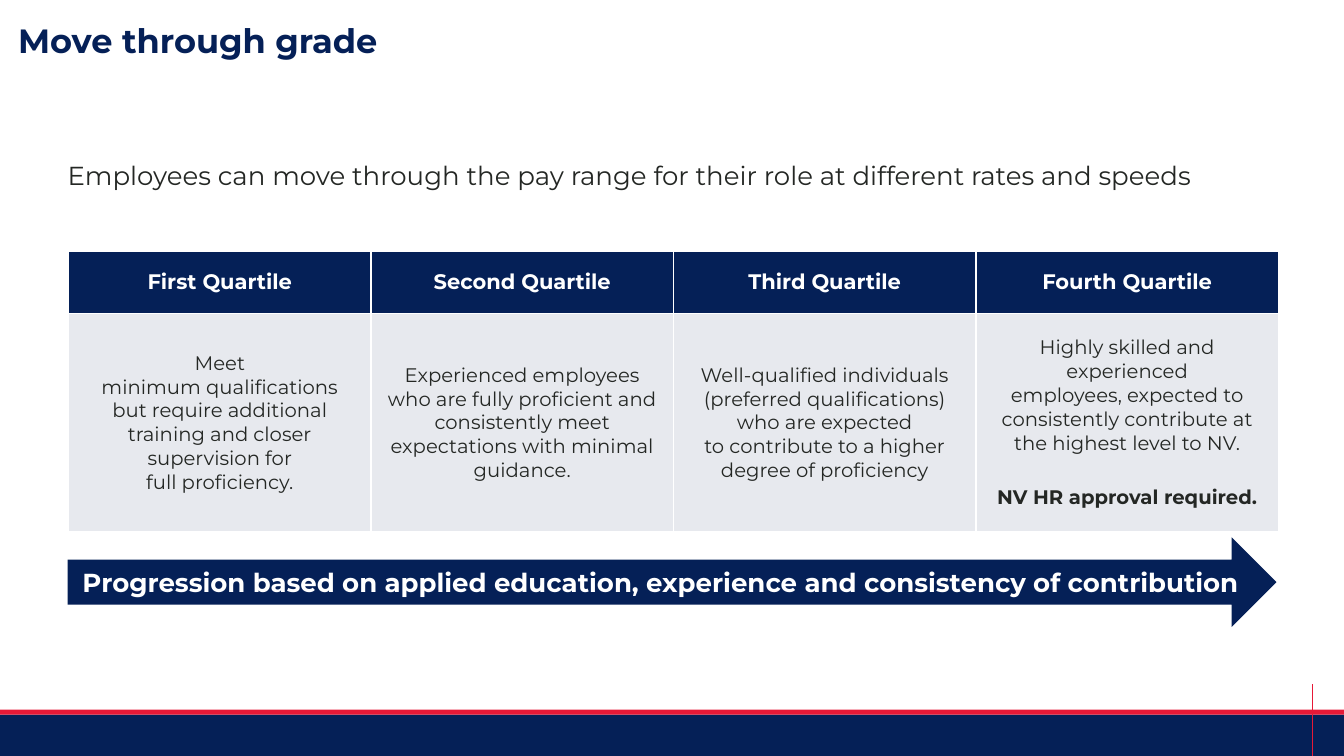
from lxml.etree import SubElement
from pptx import Presentation
from pptx.dml.color import RGBColor
from pptx.enum.shapes import MSO_CONNECTOR, MSO_SHAPE
from pptx.enum.text import MSO_ANCHOR, MSO_AUTO_SIZE, PP_ALIGN
from pptx.oxml.ns import qn
from pptx.util import Inches, Pt

NAVY, RED, GRAY, INK, WHITE = "052057", "E61937", "E7E9EE", "242724", "FFFFFF"
FONT = "Montserrat"
SLIDE_W, SLIDE_H = 13.33, 7.5
TIE, HARD_SPACE = "~", chr(160)

HEADING = "Move through grade"
INTRO = "Employees can move through the pay range for their role at different rates and speeds"
PROGRESSION = "Progression based on applied education, experience and consistency of contribution"
QUARTILES = [
    ("First Quartile", ["Meet minimum~qualifications but require~additional training and~closer supervision for full~proficiency."]),
    ("Second Quartile", ["Experienced employees who are~fully proficient and consistently~meet expectations with~minimal guidance."]),
    ("Third Quartile", ["Well-qualified individuals (preferred qualifications) who~are expected to~contribute to a higher degree of proficiency"]),
    ("Fourth Quartile", ["Highly skilled and experienced employees,~expected to consistently~contribute at the highest~level to NV.",
                         "NV HR approval required."]),
]
COLUMN_W = 3
ROW_HEIGHTS = (0.62, 2.17)


def rgb(value):
    return RGBColor.from_string(value)


def write(paragraph, text, size, color, bold=False, align=PP_ALIGN.LEFT, before=0, spacing=None):
    run = paragraph.add_run()
    run.text = text.replace(TIE, HARD_SPACE)
    run.font.name = FONT
    run.font.size = Pt(size)
    run.font.bold = bold
    run.font.color.rgb = rgb(color)
    paragraph.alignment = align
    paragraph.space_before = Pt(before)
    if spacing:
        paragraph.line_spacing = spacing


def add_block(slide, preset, box, color):
    block = slide.shapes.add_shape(preset, *map(Inches, box))
    block.shadow.inherit = False
    block.fill.solid()
    block.fill.fore_color.rgb = rgb(color)
    block.line.fill.background()
    return block


def format_cell(cell, color):
    cell.vertical_anchor = MSO_ANCHOR.MIDDLE
    cell.margin_left = cell.margin_right = Inches(0.13)
    cell.margin_top = cell.margin_bottom = Inches(0.07)
    properties = cell._tc.get_or_add_tcPr()
    for side in ("a:lnL", "a:lnR", "a:lnT", "a:lnB"):
        border = SubElement(properties, qn(side), w=str(Pt(1.4)))
        paint = SubElement(border, qn("a:solidFill"))
        SubElement(paint, qn("a:srgbClr"), val=WHITE)
    cell.fill.solid()
    cell.fill.fore_color.rgb = rgb(color)


def add_footer(slide):
    add_block(slide, MSO_SHAPE.RECTANGLE, (0, 7.09, SLIDE_W, SLIDE_H - 7.09), NAVY)
    marker = slide.shapes.add_connector(
        MSO_CONNECTOR.STRAIGHT, Inches(13.02), Inches(6.79), Inches(13.02), Inches(SLIDE_H))
    marker.line.color.rgb = rgb(RED)
    marker.line.width = Pt(0.5)
    SubElement(marker._element.spPr, qn("a:effectLst"))
    add_block(slide, MSO_SHAPE.RECTANGLE, (0, 7.04, SLIDE_W, 0.05), RED)


def add_heading(slide):
    heading = slide.shapes.title
    heading.left, heading.top, heading.width, heading.height = map(Inches, (0.08, 0.15, 3.83, 0.5))
    frame = heading.text_frame
    frame.word_wrap = False
    frame.auto_size = MSO_AUTO_SIZE.SHAPE_TO_FIT_TEXT
    frame.vertical_anchor = MSO_ANCHOR.TOP
    write(frame.paragraphs[0], HEADING, 24, NAVY, bold=True)


def add_intro(slide):
    intro = slide.shapes.add_textbox(*map(Inches, (0.67, 1.55, 12, 0.64))).text_frame
    intro.word_wrap = True
    intro.margin_left = intro.margin_right = intro.margin_top = intro.margin_bottom = 0
    write(intro.paragraphs[0], INTRO, 18.6, INK, before=13.3, spacing=1.1)


def add_quartiles(slide):
    box = (0.68, 2.49, COLUMN_W * len(QUARTILES), sum(ROW_HEIGHTS))
    table = slide.shapes.add_table(len(ROW_HEIGHTS), len(QUARTILES), *map(Inches, box)).table
    for row, height in zip(table.rows, ROW_HEIGHTS):
        row.height = Inches(height)
    for index, (quartile, details) in enumerate(QUARTILES):
        table.columns[index].width = Inches(COLUMN_W)
        header, body = table.cell(0, index), table.cell(1, index)
        format_cell(header, NAVY)
        format_cell(body, GRAY)
        write(header.text_frame.paragraphs[0], quartile, 15, WHITE, bold=True, align=PP_ALIGN.CENTER)
        frame = body.text_frame
        for position, detail in enumerate(details):
            paragraph = frame.add_paragraph() if position else frame.paragraphs[0]
            write(paragraph, detail, 14, INK, bold=position > 0, align=PP_ALIGN.CENTER,
                  before=22 if position else 0)


def add_progression(slide):
    arrow = add_block(slide, MSO_SHAPE.RIGHT_ARROW, (0.67, 5.33, 11.99, 0.89), NAVY)
    frame = arrow.text_frame
    frame.word_wrap = True
    frame.vertical_anchor = MSO_ANCHOR.MIDDLE
    write(frame.paragraphs[0], PROGRESSION, 18.6, WHITE, bold=True, align=PP_ALIGN.CENTER)


def main():
    deck = Presentation()
    deck.slide_width, deck.slide_height = Inches(SLIDE_W), Inches(SLIDE_H)
    slide = deck.slides.add_slide(deck.slide_layouts[5])
    add_footer(slide)
    add_heading(slide)
    add_intro(slide)
    add_quartiles(slide)
    add_progression(slide)
    deck.save("out.pptx")


if __name__ == "__main__":
    main()
